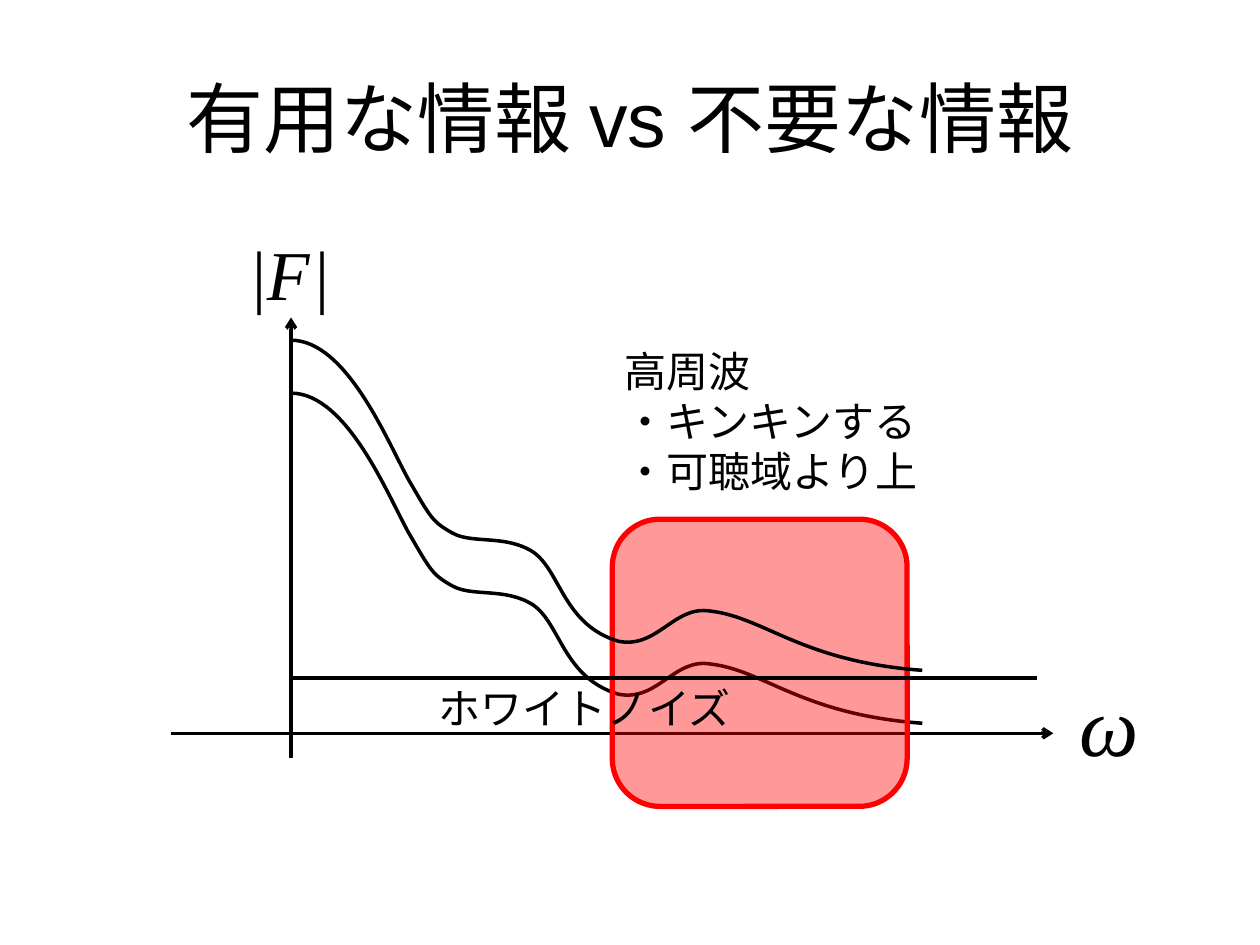
from dataclasses import dataclass

from lxml import etree
from pptx import Presentation
from pptx.dml.color import RGBColor
from pptx.enum.shapes import MSO_CONNECTOR as CONN, MSO_SHAPE as SHAPE
from pptx.enum.text import MSO_ANCHOR as ANCHOR, PP_ALIGN as ALIGN
from pptx.oxml.ns import qn
from pptx.util import Inches, Pt

BLACK = RGBColor(0x00, 0x00, 0x00)
RED = RGBColor(0xFF, 0x00, 0x00)
SANS, LATIN, MATH = "Karla", "Arial", "Times New Roman"


@dataclass
class Run:
    text: str
    font: str = SANS
    size: float = 24
    italic: bool = False


@dataclass
class Label:
    box: tuple[float, float, float, float]
    paragraphs: list[list[Run]]
    wrap: bool = False
    align: ALIGN = ALIGN.LEFT
    anchor: ANCHOR = ANCHOR.TOP


@dataclass
class Line:
    start: tuple[float, float]
    end: tuple[float, float]
    arrow: bool = False


def add_label(s, label: Label) -> None:
    tf = s.shapes.add_textbox(*map(Inches, label.box)).text_frame
    tf.word_wrap = label.wrap
    tf.vertical_anchor = label.anchor
    for i, runs in enumerate(label.paragraphs):
        p = tf.add_paragraph() if i else tf.paragraphs[0]
        p.alignment = label.align
        for run in runs:
            r = p.add_run()
            r.text = run.text
            r.font.name, r.font.size = run.font, Pt(run.size)
            r.font.italic = run.italic
            r.font.color.rgb = BLACK


def add_line(s, line: Line) -> None:
    ends = map(Inches, line.start + line.end)
    c = s.shapes.add_connector(CONN.STRAIGHT, *ends)
    c.line.color.rgb, c.line.width = BLACK, Pt(2)
    if line.arrow:
        etree.SubElement(c.line._get_or_add_ln(), qn("a:tailEnd"), type="arrow")
    etree.SubElement(c._element.spPr, qn("a:effectLst"))


def add_curve(s, points: list[tuple[float, float]], dy: float = 0) -> None:
    """Draw a start point followed by triples of Bezier control points."""
    pts = [(Inches(x), Inches(y + dy)) for x, y in points]
    builder = s.shapes.build_freeform(*pts[0])
    builder.add_line_segments(pts[1:], close=False)
    sp = builder.convert_to_shape()
    sp.shadow.inherit = False
    sp.fill.background()
    sp.line.color.rgb, sp.line.width = BLACK, Pt(2)
    # Merge every three straight segments into one cubic segment
    path = sp._element.find(".//" + qn("a:path"))
    segments = path.findall(qn("a:lnTo"))
    for i in range(0, len(segments), 3):
        cubic = etree.SubElement(path, qn("a:cubicBezTo"))
        for segment in segments[i:i + 3]:
            cubic.append(segment[0])
            path.remove(segment)


def add_band(s, box: tuple[float, float, float, float]) -> None:
    sp = s.shapes.add_shape(SHAPE.ROUNDED_RECTANGLE, *map(Inches, box))
    sp.shadow.inherit = False
    sp.fill.solid()
    sp.fill.fore_color.rgb = RED
    color = sp._element.spPr.find(qn("a:solidFill"))[0]
    etree.SubElement(color, qn("a:alpha"), val="40000")
    sp.line.color.rgb, sp.line.width = RED, Pt(3)


SPECTRUM = [
    (2.31, 2.70),
    (2.76, 2.70), (3.09, 3.54), (3.25, 3.82),
    (3.42, 4.11), (3.43, 4.14), (3.59, 4.23),
    (3.75, 4.32), (4.01, 4.24), (4.23, 4.38),
    (4.45, 4.53), (4.47, 4.96), (4.91, 5.09),
    (5.22, 5.15), (5.35, 4.80), (5.64, 4.85),
    (6.07, 4.90), (6.36, 5.25), (7.32, 5.32),
]
NOISE_SHIFT = 0.42

TITLE = Label((0.5, 0.3, 9, 1.25), [[
    Run("有用な情報 ", SANS, 44), Run("vs 不要な", LATIN, 44), Run("情報", SANS, 44),
]], True, ALIGN.CENTER, ANCHOR.MIDDLE)
OMEGA = Label((8.47, 5.29, 0.47, 0.91), [[Run("ω", MATH, 48, True)]], True)
MAGNITUDE = Label((1.91, 1.78, 0.94, 0.77), [[
    Run("|", MATH, 40), Run("F", MATH, 40, True),
    Run(" ", MATH, 14, True), Run("|", MATH, 40),
]], True)
HIGH_FREQUENCY = Label((4.86, 2.69, 2.56, 1.31), [
    [Run("高周波")], [Run("・キンキンする")], [Run("・可聴域より上")],
])
WHITE_NOISE = Label((3.38, 5.37, 2.56, 0.5), [[Run("ホワイトノイズ")]])


def main() -> None:
    prs = Presentation()
    prs.slide_width, prs.slide_height = Inches(10), Inches(7.5)
    s = prs.slides.add_slide(prs.slide_layouts[6])

    add_label(s, TITLE)

    # Axes and the clean spectrum
    add_label(s, OMEGA)
    add_line(s, Line((1.36, 5.82), (8.36, 5.82), arrow=True))
    add_curve(s, SPECTRUM, NOISE_SHIFT)
    add_line(s, Line((2.31, 6.02), (2.31, 2.52), arrow=True))
    add_label(s, MAGNITUDE)

    # High-frequency band
    add_band(s, (4.86, 4.12, 2.34, 2.28))
    add_label(s, HIGH_FREQUENCY)

    # Spectrum raised by the white noise floor
    add_curve(s, SPECTRUM)
    add_line(s, Line((2.31, 5.38), (8.23, 5.38)))
    add_label(s, WHITE_NOISE)

    prs.save("out.pptx")


if __name__ == "__main__":
    main()
